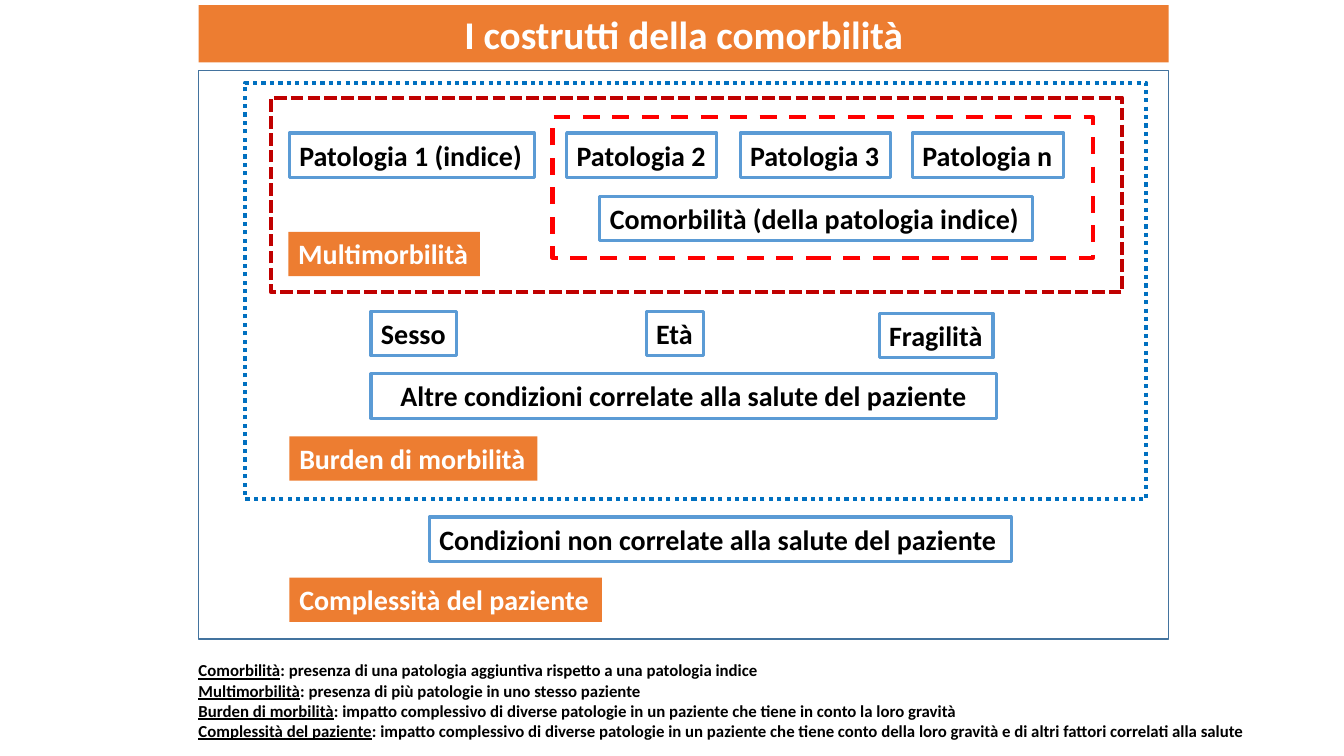
from pptx import Presentation
from pptx import util as u
from pptx.dml.color import RGBColor
from pptx.enum import dml, shapes, text

# Content: lengths in px, 100 px to the inch
TITLE = ("I costrutti della comorbilità", (197, 5, 962, 57))

# left, top, width, height, colour, line width in pt, dash
FRAMES = [
    (197, 70, 962, 564, "patient", 1, None),
    (548, 116, 536, 140, "comorbidity", 3, dml.MSO_LINE.DASH),
    (269, 97, 844, 193, "multimorbidity", 3, dml.MSO_LINE.SQUARE_DOT),
    (243, 82, 894, 413, "burden", 3, dml.MSO_LINE.ROUND_DOT),
]

# top of the row, then text, left and width of each box
FACTOR_ROWS = [
    (132, [("Patologia 1 (indice)", 287, 243), ("Patologia 2", 562, 149),
           ("Patologia 3", 734, 149), ("Patologia n", 905, 150)]),
    (195, [("Comorbilità (della patologia indice)", 595, 429)]),
    (309, [("Sesso", 368, 85), ("Età", 641, 57)]),
    (311, [("Fragilità", 872, 113)]),
    (371, [("Altre condizioni correlate alla salute del paziente", 368, 620)]),
    (513, [("Condizioni non correlate alla salute del paziente", 426, 577)]),
]
CONSTRUCT_ROWS = [
    (230, [("Multimorbilità", 286, 190)]),
    (433, [("Burden di morbilità", 287, 246)]),
    (573, [("Complessità del paziente", 287, 310)]),
]

DEFINITIONS_AT = (187, 650, 1071, 91)
DEFINITIONS = [
    ("Comorbilità", "presenza di una patologia aggiuntiva rispetto a una patologia indice"),
    ("Multimorbilità", "presenza di più patologie in uno stesso paziente"),
    ("Burden di morbilità", "impatto complessivo di diverse patologie in un paziente "
     "che tiene in conto la loro gravità"),
    ("Complessità del paziente", "impatto complessivo di diverse patologie in un paziente "
     "che tiene conto della loro gravità e di altri fattori correlati alla salute"),
]

THEME = {
    "font": "Calibri",
    "sizes": {"title": 28, "box": 20, "definition": 12},
    "colours": {"accent": "ED7D31", "box": "5B9BD5", "patient": "43739E",
                "comorbidity": "FF0000", "multimorbidity": "C00000",
                "burden": "0070C0", "dark": "000000", "light": "FFFFFF"},
}
PX = u.Inches(1) // 100
BOX_HEIGHT = 44
BOX_LINE = 2.25


def colour(name):
    return RGBColor.from_string(THEME["colours"][name])


def emu(at):
    return [v * PX for v in at]


def add_run(p, words, size, ink, underline=False):
    r = p.add_run()
    r.text = words
    style = {"name": THEME["font"], "size": u.Pt(THEME["sizes"][size]),
             "bold": True, "underline": underline}
    for key, value in style.items():
        setattr(r.font, key, value)
    r.font.color.rgb = colour(ink)


def add_rect(slide, at, fill=None, line=None, width=BOX_LINE, dash=None):
    sp = slide.shapes.add_shape(shapes.MSO_SHAPE.RECTANGLE, *emu(at))
    sp.shadow.inherit = False
    if fill:
        sp.fill.solid()
        sp.fill.fore_color.rgb = colour(fill)
    else:
        sp.fill.background()
    if line:
        sp.line.color.rgb = colour(line)
        sp.line.width = u.Pt(width)
        if dash:
            sp.line.dash_style = dash
    else:
        sp.line.fill.background()
    return sp


def add_label(sp, words, size, ink, centred=False):
    """Write one line into a shape; only centred text wraps."""
    tf = sp.text_frame
    frame = {"word_wrap": centred, "vertical_anchor": text.MSO_ANCHOR.TOP,
             "auto_size": text.MSO_AUTO_SIZE.SHAPE_TO_FIT_TEXT}
    for key, value in frame.items():
        setattr(tf, key, value)
    p = tf.paragraphs[0]
    p.alignment = text.PP_ALIGN.CENTER if centred else text.PP_ALIGN.LEFT
    add_run(p, words, size, ink)


def add_rows(slide, rows, ink, **look):
    for top, boxes in rows:
        for words, left, width in boxes:
            sp = add_rect(slide, (left, top, width, BOX_HEIGHT), **look)
            add_label(sp, words, "box", ink, centred=words.startswith("Altre"))


def add_definitions(slide):
    tf = slide.shapes.add_textbox(*emu(DEFINITIONS_AT)).text_frame
    tf.word_wrap = False
    for i, (term, meaning) in enumerate(DEFINITIONS):
        p = tf.add_paragraph() if i else tf.paragraphs[0]
        add_run(p, term, "definition", "dark", underline=True)
        add_run(p, f": {meaning}", "definition", "dark")


def main():
    prs = Presentation()
    prs.slide_width, prs.slide_height = emu((1333, 750))
    slide = prs.slides.add_slide(prs.slide_layouts[6])

    title, at = TITLE
    add_label(add_rect(slide, at, fill="accent"), title, "title", "light", centred=True)
    for *at, line, width, dash in FRAMES:
        add_rect(slide, at, line=line, width=width, dash=dash)
    add_rows(slide, FACTOR_ROWS, "dark", line="box")
    add_rows(slide, CONSTRUCT_ROWS, "light", fill="accent")
    add_definitions(slide)
    prs.save("out.pptx")


if __name__ == "__main__":
    main()
